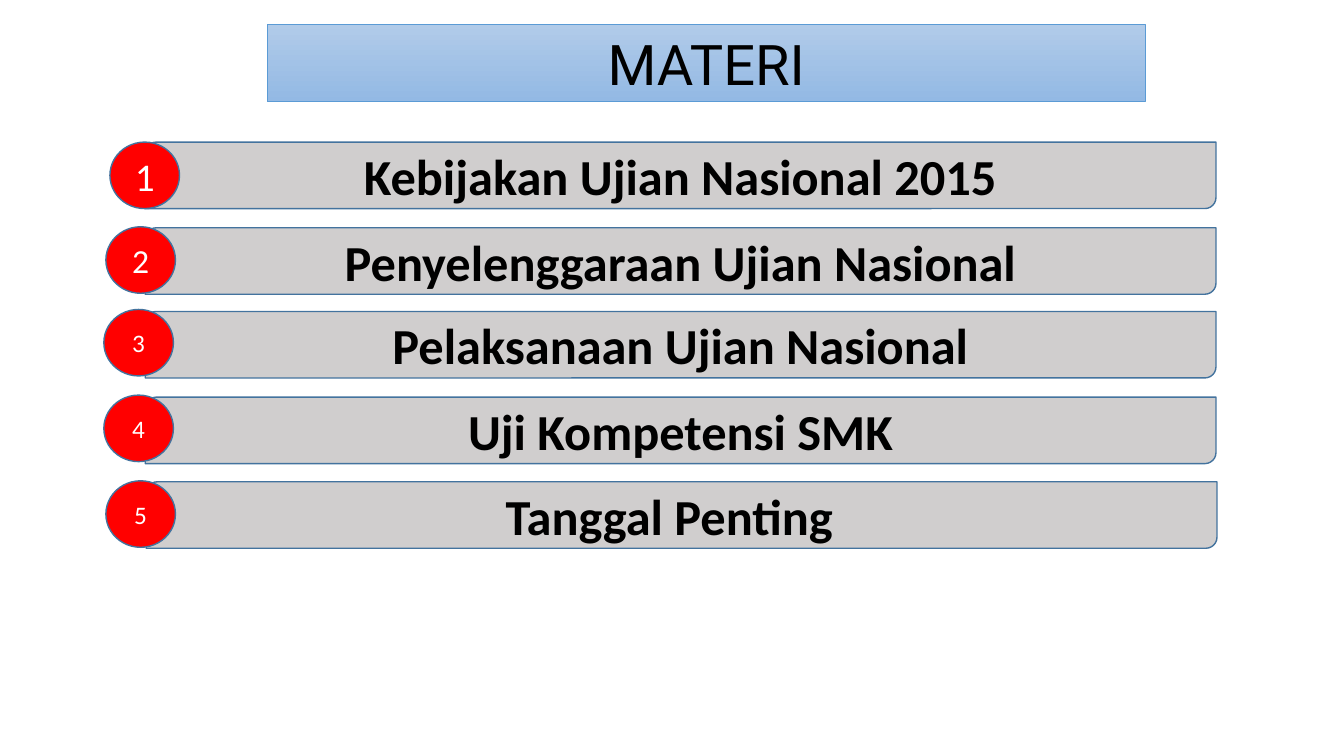
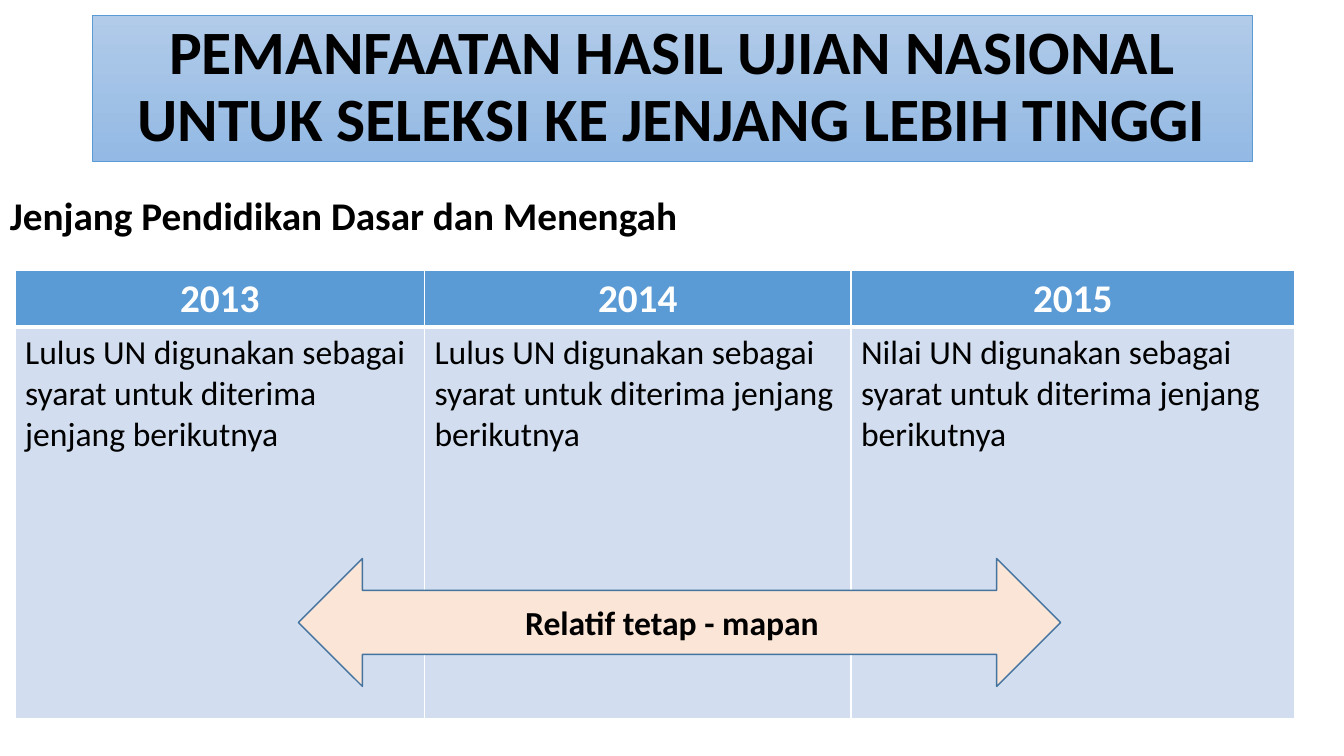
from lxml.etree import SubElement
from pptx import Presentation
from pptx.dml.color import RGBColor
from pptx.enum.shapes import MSO_SHAPE
from pptx.enum.text import MSO_ANCHOR, PP_ALIGN
from pptx.oxml.ns import qn
from pptx.util import Inches, Pt

BLACK = RGBColor(0x00, 0x00, 0x00)
WHITE = RGBColor(0xFF, 0xFF, 0xFF)
RED = RGBColor(0xFF, 0x00, 0x00)
GREY = RGBColor(0xD0, 0xCE, 0xCE)
PEACH = RGBColor(0xFB, 0xE5, 0xD6)
BLUE = RGBColor(0x5B, 0x9B, 0xD5)
DARK_BLUE = RGBColor(0x43, 0x73, 0x9E)
PALE_BLUE = RGBColor(0xD2, 0xDE, 0xEF)
GRADIENT = (RGBColor(0xB1, 0xCB, 0xE9), RGBColor(0x93, 0xB9, 0xE4))
FONT = "Calibri"

# (topic, bar left, bar top, right inset, circle left, circle top, number size)
TOPICS = [
    ("Kebijakan Ujian Nasional 2015", 1.44, 1.41, 0.1, 1.09, 1.41, 28),
    ("Penyelenggaraan Ujian Nasional", 1.44, 2.26, 0.1, 1.05, 2.25, 24),
    ("Pelaksanaan Ujian Nasional", 1.44, 3.09, 0.1, 1.03, 3.07, 18),
    ("Uji Kompetensi SMK", 1.44, 3.94, 0.1, 1.03, 3.92, 18),
    ("Tanggal Penting", 1.45, 4.78, 0.34, 1.05, 4.77, 18),
]
USAGE_TITLE = ["PEMANFAATAN HASIL UJIAN NASIONAL", "UNTUK SELEKSI KE JENJANG LEBIH TINGGI"]
USAGE_BY_YEAR = [
    ("2013", "Lulus UN digunakan sebagai syarat untuk diterima jenjang berikutnya", 4.06),
    ("2014", "Lulus UN digunakan sebagai syarat untuk diterima jenjang berikutnya", 4.23),
    ("2015", "Nilai UN digunakan sebagai syarat untuk diterima jenjang berikutnya", 4.4),
]
ROW_HEIGHTS = (0.55, 3.88)


def write(frame, lines, size, color=BLACK, bold=False, align=PP_ALIGN.CENTER, font=FONT, spacing=1.0):
    """Fill a text frame with one paragraph per line."""
    frame.word_wrap = True
    for index, line in enumerate(lines):
        paragraph = frame.add_paragraph() if index else frame.paragraphs[0]
        paragraph.alignment = align
        paragraph.line_spacing = spacing
        run = paragraph.add_run()
        run.text = line
        run.font.name = font
        run.font.size = Pt(size)
        run.font.bold = bold
        run.font.color.rgb = color


def add_shape(slide, kind, box, fill, line=DARK_BLUE, width=1):
    """Add a preset shape without shadow; a None fill is left to the caller."""
    shape = slide.shapes.add_shape(kind, *map(Inches, box))
    shape.shadow.inherit = False
    if fill is not None:
        shape.fill.solid()
        shape.fill.fore_color.rgb = fill
    shape.line.color.rgb = line
    shape.line.width = Pt(width)
    shape.text_frame.vertical_anchor = MSO_ANCHOR.MIDDLE
    return shape


def add_title(slide, box, lines, size, **style):
    """Add the gradient title band."""
    band = add_shape(slide, MSO_SHAPE.RECTANGLE, box, None, BLUE, 0.5)
    band.fill.gradient()
    band.fill.gradient_angle = 270
    for stop, color, position in zip(band.fill.gradient_stops, GRADIENT, (0, 1)):
        stop.color.rgb = color
        stop.position = position
    write(band.text_frame, lines, size, **style)


def add_label(slide, box, text, size, align):
    """Add a bold text box."""
    label = slide.shapes.add_textbox(*map(Inches, box))
    write(label.text_frame, [text], size, bold=True, align=align)


def style_cell(cell, fill, top, bottom):
    """Set the fill and the white borders of a table cell."""
    cell.fill.solid()
    cell.fill.fore_color.rgb = fill
    properties = cell._tc.get_or_add_tcPr()
    borders = (("a:lnL", 1), ("a:lnR", 1), ("a:lnT", top), ("a:lnB", bottom))
    for index, (tag, width) in enumerate(borders):
        border = SubElement(properties, qn(tag), w=str(Pt(width)))
        color = SubElement(SubElement(border, qn("a:solidFill")), qn("a:srgbClr"))
        color.set("val", str(WHITE))
        properties.insert(index, border)


def build_topics(slide):
    """Build the numbered list of topics."""
    add_title(slide, (2.65, 0.24, 8.71, 0.77), ["MATERI"], 40, font="Roboto")
    for number, topic in enumerate(TOPICS, 1):
        text, bar_left, bar_top, inset, circle_left, circle_top, size = topic
        bar = add_shape(slide, MSO_SHAPE.ROUND_2_DIAG_RECTANGLE, (bar_left, bar_top, 10.62, 0.66), GREY)
        bar.text_frame.margin_right = Inches(inset)
        write(bar.text_frame, [text], 36, bold=True)
        circle = add_shape(slide, MSO_SHAPE.OVAL, (circle_left, circle_top, 0.69, 0.66), RED)
        write(circle.text_frame, [str(number)], size, WHITE)


def build_usage(slide):
    """Build the table of how exam results are used each year."""
    add_title(slide, (0.92, 0.15, 11.5, 1.45), USAGE_TITLE, 44, bold=True, spacing=0.9)
    add_label(slide, (0, 1.85, 7.61, 0.57), "Jenjang Pendidikan Dasar dan Menengah", 28, PP_ALIGN.LEFT)
    box = map(Inches, (0.15, 2.68, 12.69, sum(ROW_HEIGHTS)))
    table = slide.shapes.add_table(len(ROW_HEIGHTS), len(USAGE_BY_YEAR), *box).table
    for row, height in zip(table.rows, ROW_HEIGHTS):
        row.height = Inches(height)
    for column, (year, usage, width) in enumerate(USAGE_BY_YEAR):
        table.columns[column].width = Inches(width)
        header, body = table.cell(0, column), table.cell(1, column)
        style_cell(header, BLUE, 1, 3)
        write(header.text_frame, [year], 28, WHITE, bold=True)
        style_cell(body, PALE_BLUE, 3, 1)
        write(body.text_frame, [usage], 24, align=PP_ALIGN.LEFT)
    add_shape(slide, MSO_SHAPE.LEFT_RIGHT_ARROW, (2.96, 5.54, 7.56, 1.27), PEACH)
    add_label(slide, (4.05, 5.92, 5.23, 0.5), "Relatif tetap - mapan", 24, PP_ALIGN.CENTER)


def main():
    """Build and save the presentation."""
    presentation = Presentation()
    presentation.slide_width = Inches(13.33)
    presentation.slide_height = Inches(7.5)
    for build in (build_topics, build_usage):
        build(presentation.slides.add_slide(presentation.slide_layouts[6]))
    presentation.save("out.pptx")


if __name__ == "__main__":
    main()
